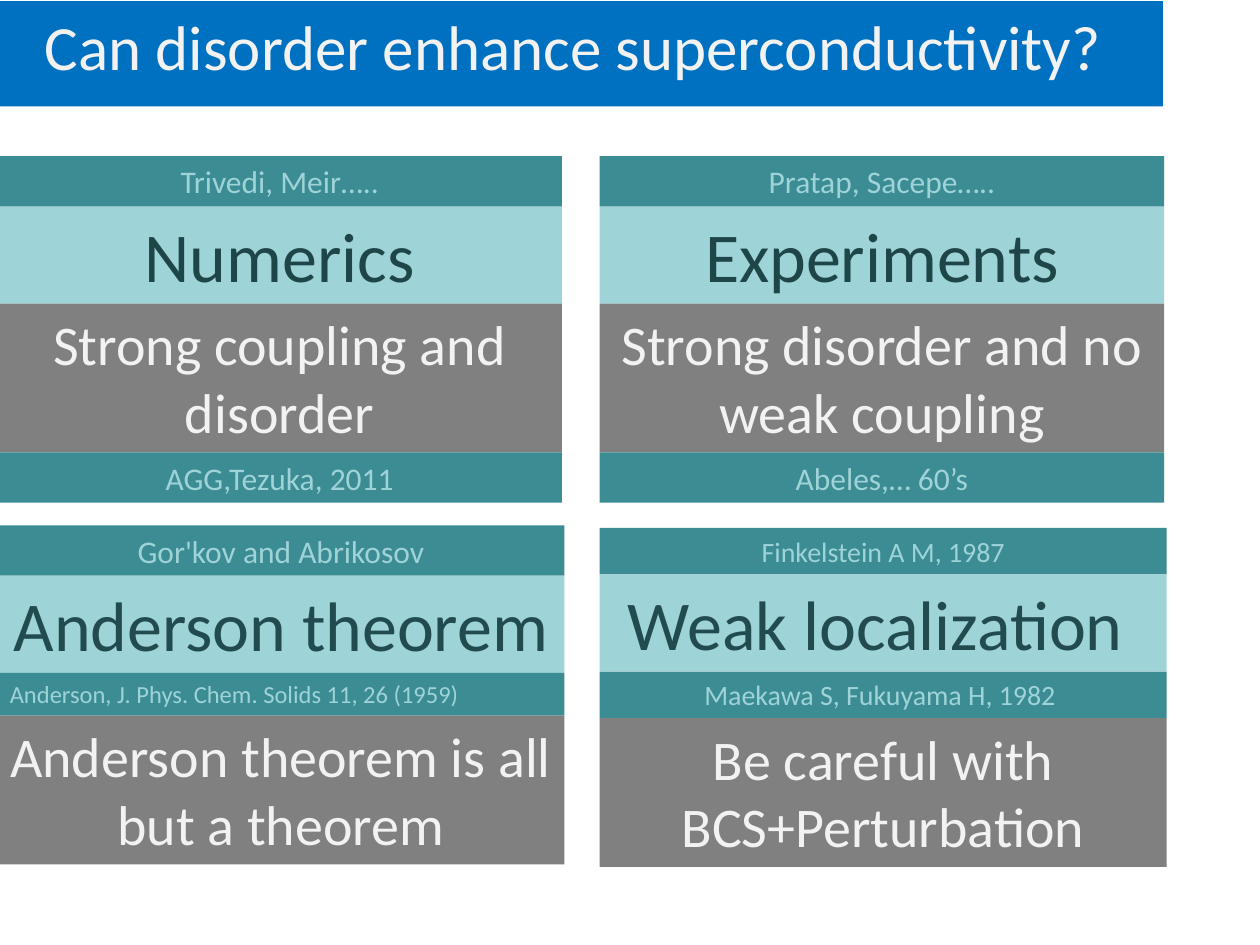
from dataclasses import dataclass
from typing import NamedTuple

from pptx import Presentation
from pptx.dml.color import RGBColor
from pptx.enum.text import MSO_ANCHOR, MSO_AUTO_SIZE, PP_ALIGN
from pptx.util import Inches, Pt

LEFT, MID = PP_ALIGN.LEFT, PP_ALIGN.CENTER
TOP = MSO_ANCHOR.TOP
GROW = MSO_AUTO_SIZE.SHAPE_TO_FIT_TEXT
WIDE, HIGH = Inches(10), Inches(7.5)
COLS, ROWS = 1000, 750


class Style(NamedTuple):
    fill: str
    ink: str
    size: int
    rows: int


@dataclass(frozen=True)
class Theme:
    font: str = "Calibri"
    title: Style = Style("0070C0", "F2F2F2", 36, 71)
    dark: Style = Style("9ED3D7", "1E4649", 40, 77)
    head: Style = Style("9ED3D7", "224B50", 40, 77)
    claim: Style = Style("808080", "F2F2F2", 32, 118)
    note: Style = Style("3C8C93", "9ED3D7", 18, 40)
    small: Style = Style("3C8C93", "9ED3D7", 16, 37)
    cite: Style = Style("3C8C93", "9ED3D7", 14, 34)


class Band(NamedTuple):
    text: str
    style: Style
    align: PP_ALIGN = MID


class Panel(NamedTuple):
    col: int
    row: int
    cols: int
    bands: list[Band]


THEME = Theme()
PANELS = [
    Panel(-2, 124, 448, [
        Band("Trivedi, Meir…..", THEME.note),
        Band("Numerics", THEME.dark),
        Band("Strong coupling and disorder", THEME.claim),
        Band("AGG,Tezuka, 2011", THEME.note),
    ]),
    Panel(476, 124, 448, [
        Band("Pratap, Sacepe…..", THEME.note),
        Band("Experiments", THEME.dark),
        Band("Strong disorder and no weak coupling", THEME.claim),
        Band("Abeles,… 60’s", THEME.note),
    ]),
    Panel(-2, 417, 450, [
        Band("Gor'kov and Abrikosov", THEME.note),
        Band("Anderson theorem", THEME.head),
        Band("Anderson, J. Phys. Chem. Solids 11, 26 (1959)", THEME.cite, LEFT),
        Band("Anderson theorem is all but a theorem", THEME.claim),
    ]),
    Panel(476, 419, 450, [
        Band("Finkelstein A M, 1987", THEME.small),
        Band("Weak localization ", THEME.head),
        Band("Maekawa S, Fukuyama H, 1982 ", THEME.small),
        Band("Be careful with BCS+Perturbation", THEME.claim),
    ]),
]


def place(col: int, row: int, cols: int, rows: int) -> dict[str, int]:
    """Turn grid units into a shape's position and size."""
    return {
        "left": WIDE * col // COLS,
        "top": HIGH * row // ROWS,
        "width": WIDE * cols // COLS,
        "height": HIGH * rows // ROWS,
    }


def apply(item, values: dict) -> None:
    for name, value in values.items():
        setattr(item, name, value)


def draw(shape, band: Band, spot: dict[str, int]) -> None:
    style = band.style
    apply(shape, spot)
    shape.fill.solid()
    shape.fill.fore_color.rgb = RGBColor.from_string(style.fill)
    frame = shape.text_frame
    apply(frame, {"word_wrap": True, "auto_size": GROW, "vertical_anchor": TOP})
    par = frame.paragraphs[0]
    par.alignment = band.align
    run = par.add_run()
    run.text = band.text
    apply(run.font, {"name": THEME.font, "size": Pt(style.size)})
    run.font.color.rgb = RGBColor.from_string(style.ink)


def stack(slide, panel: Panel) -> None:
    """Draw a panel's bands from the top down, without gaps."""
    row = panel.row
    for band in panel.bands:
        spot = place(panel.col, row, panel.cols, band.style.rows)
        draw(slide.shapes.add_textbox(**spot), band, spot)
        row += band.style.rows


def main() -> None:
    deck = Presentation()
    apply(deck, {"slide_width": WIDE, "slide_height": HIGH})
    slide = deck.slides.add_slide(deck.slide_layouts[5])
    title = Band("Can disorder enhance superconductivity? ", THEME.title)
    draw(slide.shapes.title, title, place(-2, 1, 925, THEME.title.rows))
    for panel in PANELS:
        stack(slide, panel)
    deck.save("out.pptx")


if __name__ == "__main__":
    main()
